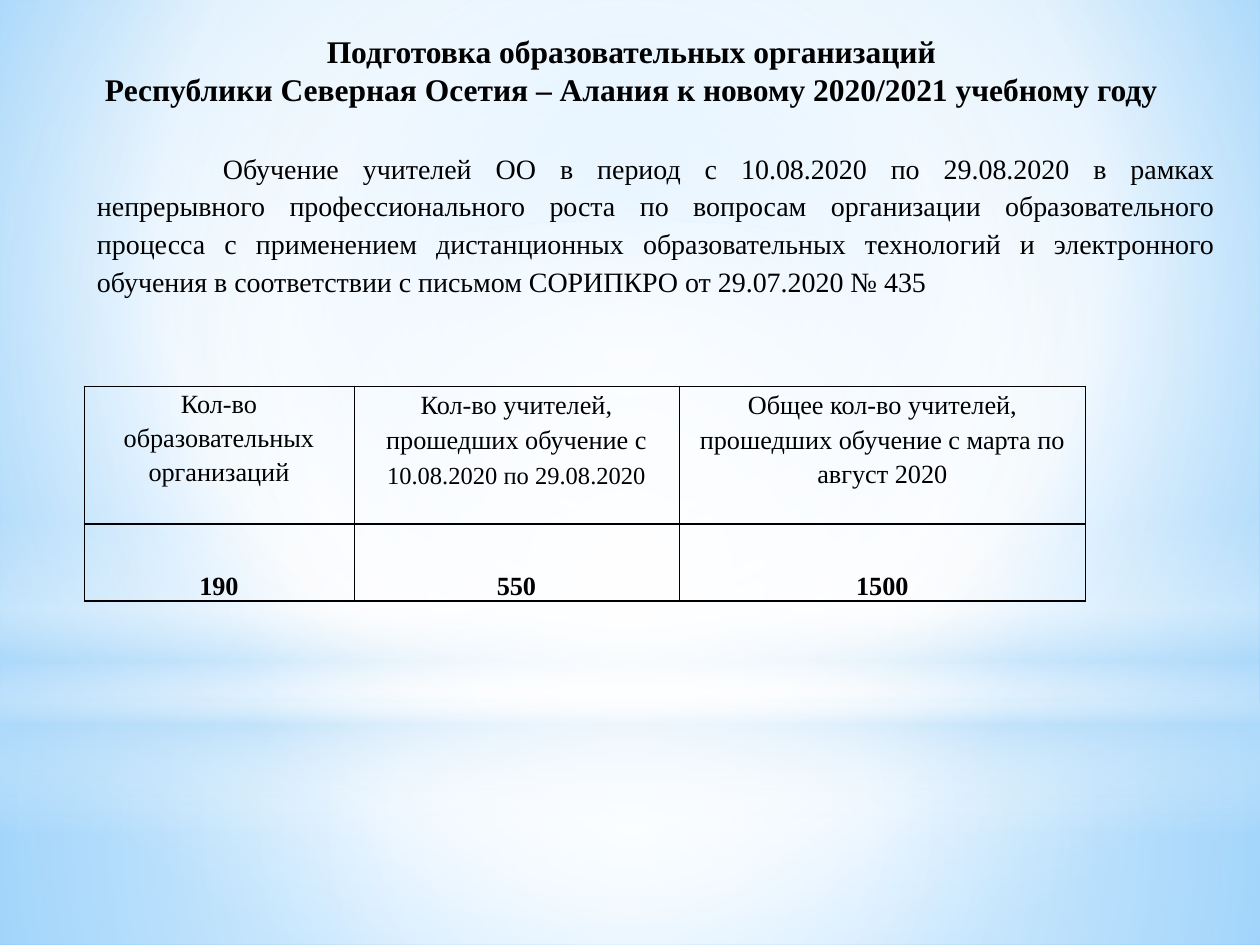
from dataclasses import dataclass
from typing import Optional

from lxml.etree import SubElement
from pptx import Presentation
from pptx.dml.color import RGBColor
from pptx.enum.shapes import MSO_SHAPE
from pptx.enum.text import MSO_ANCHOR, MSO_AUTO_SIZE, PP_ALIGN
from pptx.oxml import parse_xml
from pptx.oxml.ns import nsdecls, qn
from pptx.util import Emu, Pt

PX_PER_INCH = 126


def px(length: int) -> Emu:
    return Emu(round(length * 914400 / PX_PER_INCH))


@dataclass(frozen=True)
class Theme:
    font: str = "Times New Roman"
    ink: str = "000000"
    white: str = "FFFFFF"
    haze: str = "B4DCFA"
    sky: str = "9ED5FF"
    deep_sky: str = "5BB9FF"
    title_size: int = 18
    body_size: int = 16
    cell_size: int = 15
    date_size: int = 14


THEME = Theme()


@dataclass(frozen=True)
class Box:
    left: int
    top: int
    width: int
    height: int

    def emu(self) -> tuple:
        return tuple(px(v) for v in (self.left, self.top, self.width, self.height))


@dataclass(frozen=True)
class Stop:
    position: int
    color: str
    alpha: int = 100


@dataclass(frozen=True)
class Gradient:
    stops: tuple
    focus: Optional[tuple] = None  # left, top, right, bottom in percent
    angle: int = 0


@dataclass(frozen=True)
class Glow:
    box: Box
    gradient: Gradient
    preset: MSO_SHAPE = MSO_SHAPE.RECTANGLE


@dataclass(frozen=True)
class Column:
    width: int
    heading: tuple  # (text, size) spans
    spacing: float
    value: str


CENTRE = (50, 50, 50, 50)
BACKDROP = Gradient((Stop(0, THEME.sky), Stop(60, THEME.white), Stop(100, THEME.deep_sky)),
                    focus=(20, 10, 20, 60))
GLOWS = (
    Glow(Box(0, 703, 1260, 242), Gradient(
        (Stop(0, THEME.white, 91), Stop(37, THEME.white, 76), Stop(100, THEME.haze, 79)), CENTRE)),
    Glow(Box(0, 0, 1260, 703), Gradient(
        (Stop(0, THEME.white, 89), Stop(48, THEME.white, 62), Stop(100, THEME.haze, 79)), CENTRE)),
    Glow(Box(0, 519, 1260, 315), Gradient(
        (Stop(0, THEME.white, 0), Stop(29, THEME.white, 30), Stop(45, THEME.haze, 40),
         Stop(55, THEME.white, 26), Stop(65, THEME.haze, 60), Stop(100, THEME.white, 0)), angle=90)),
    Glow(Box(0, 221, 1260, 703), Gradient(
        (Stop(0, THEME.white), Stop(56, THEME.white, 0)), CENTRE), MSO_SHAPE.OVAL),
)

TITLE = ("Подготовка образовательных организаций",
         "Республики Северная Осетия – Алания к новому 2020/2021 учебному году")
BODY = ("Обучение учителей ОО в период с 10.08.2020 по 29.08.2020 в рамках непрерывного "
        "профессионального роста по вопросам организации образовательного процесса с применением "
        "дистанционных образовательных технологий и электронного обучения в соответствии с "
        "письмом СОРИПКРО от 29.07.2020 № 435")
COLUMNS = (
    Column(270, (("Кол-во образовательных организаций", THEME.cell_size),), 19.2, "190"),
    Column(325, (("Кол-во учителей, прошедших обучение с ", THEME.cell_size),
                 ("10.08.2020 по 29.08.2020", THEME.date_size)), 19.7, "550"),
    Column(407, (("Общее кол-во учителей, прошедших обучение с марта по август 2020",
                  THEME.cell_size),), 19.7, "1500"),
)
ROW_HEIGHTS = (138, 77)


def gradient_element(gradient: Gradient):
    fill = parse_xml(f'<a:gradFill {nsdecls("a")} rotWithShape="1"><a:gsLst/></a:gradFill>')
    for stop in gradient.stops:
        mark = SubElement(fill[0], qn("a:gs"), pos=str(stop.position * 1000))
        color = SubElement(mark, qn("a:srgbClr"), val=stop.color)
        if stop.alpha < 100:
            SubElement(color, qn("a:alpha"), val=str(stop.alpha * 1000))
    if gradient.focus:
        path = SubElement(fill, qn("a:path"), path="circle")
        SubElement(path, qn("a:fillToRect"),
                   {side: str(v * 1000) for side, v in zip("ltrb", gradient.focus)})
    else:
        SubElement(fill, qn("a:lin"), ang=str(gradient.angle * 60000), scaled="0")
    return fill


def apply_gradient(fill, owner, gradient: Gradient) -> None:
    fill.solid()
    solid = owner.find(".//" + qn("a:solidFill"))
    solid.getparent().replace(solid, gradient_element(gradient))


def add_span(para, text: str, *, size: int, bold: bool = False) -> None:
    span = para.add_run()
    span.text = text
    span.font.name = THEME.font
    span.font.size = Pt(size)
    span.font.bold = bold
    span.font.color.rgb = RGBColor.from_string(THEME.ink)


def format_para(para, *, align=PP_ALIGN.CENTER, spacing: Optional[float] = None,
                indent: int = 0) -> None:
    para.alignment = align
    if spacing:
        para.line_spacing = Pt(spacing)
    if indent:
        para._p.get_or_add_pPr().set("indent", str(px(indent)))


def clear_margins(holder) -> None:
    holder.margin_left = holder.margin_top = holder.margin_right = holder.margin_bottom = 0


def add_glow(page, glow: Glow) -> None:
    shape = page.shapes.add_shape(glow.preset, *glow.box.emu())
    shape.shadow.inherit = False
    shape.line.fill.background()
    apply_gradient(shape.fill, shape.element.spPr, glow.gradient)


def style_cell(cell, bottom_width: float) -> None:
    cell.fill.background()
    clear_margins(cell)
    properties = cell._tc.get_or_add_tcPr()
    widths = {"lnL": 0.5, "lnR": 0.5, "lnT": 0.5, "lnB": bottom_width}
    for index, (tag, width) in enumerate(widths.items()):
        properties.insert(index, parse_xml(
            f'<a:{tag} {nsdecls("a")} w="{Pt(width)}"><a:solidFill>'
            f'<a:srgbClr val="{THEME.ink}"/></a:solidFill></a:{tag}>'))


def add_training_table(page, left: int, top: int) -> None:
    box = Box(left, top, sum(c.width for c in COLUMNS), sum(ROW_HEIGHTS))
    table = page.shapes.add_table(len(ROW_HEIGHTS), len(COLUMNS), *box.emu()).table
    table.first_row = table.horz_banding = False
    for row, height in zip(table.rows, ROW_HEIGHTS):
        row.height = px(height)
    for index, column in enumerate(COLUMNS):
        table.columns[index].width = px(column.width)
        heading, value = table.cell(0, index), table.cell(1, index)
        for cell in (heading, value):
            style_cell(cell, bottom_width=1)
        para = heading.text_frame.paragraphs[0]
        format_para(para, spacing=column.spacing)
        for text, size in column.heading:
            add_span(para, text, size=size)
        value.vertical_anchor = MSO_ANCHOR.BOTTOM
        para = value.text_frame.paragraphs[0]
        format_para(para)
        add_span(para, column.value, size=THEME.cell_size, bold=True)


def main() -> None:
    deck = Presentation()
    deck.slide_width, deck.slide_height = px(1260), px(945)
    page = deck.slides.add_slide(deck.slide_layouts[6])

    # Backdrop
    apply_gradient(page.background.fill, page.element, BACKDROP)
    for glow in GLOWS:
        add_glow(page, glow)

    # Body paragraph
    frame = page.shapes.add_textbox(*Box(97, 147, 1118, 224).emu()).text_frame
    frame.word_wrap = True
    clear_margins(frame)
    para = frame.paragraphs[0]
    format_para(para, align=PP_ALIGN.JUSTIFY, spacing=21.6, indent=126)
    add_span(para, BODY, size=THEME.body_size)

    # Table
    add_training_table(page, left=84, top=386)

    # Title
    frame = page.shapes.add_textbox(*Box(71, 26, 1121, 89).emu()).text_frame
    frame.word_wrap = True
    frame.auto_size = MSO_AUTO_SIZE.SHAPE_TO_FIT_TEXT
    for index, line in enumerate(TITLE):
        para = frame.add_paragraph() if index else frame.paragraphs[0]
        format_para(para)
        add_span(para, line, size=THEME.title_size, bold=True)

    deck.save("out.pptx")


if __name__ == "__main__":
    main()
